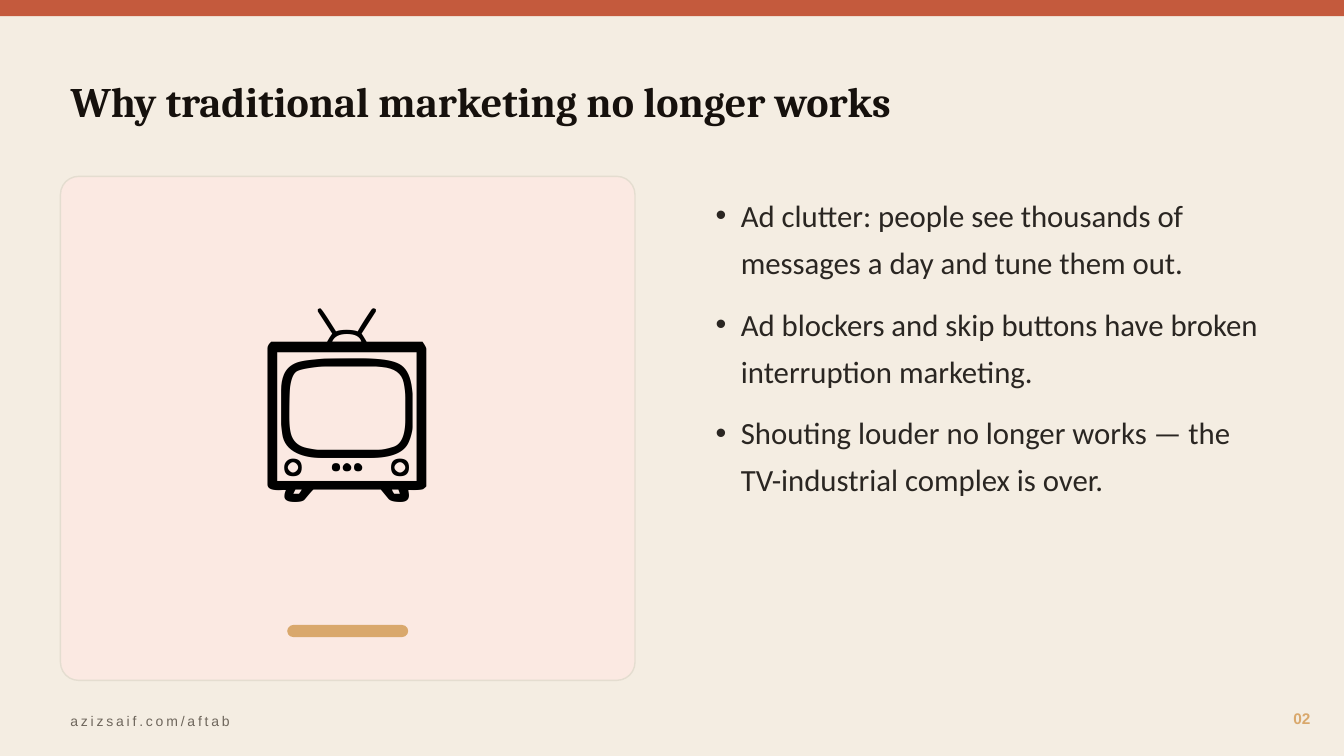
from pptx import Presentation
from pptx.dml.color import RGBColor
from pptx.enum.shapes import MSO_SHAPE as SHAPE
from pptx.enum.text import MSO_ANCHOR as ANCHOR, MSO_AUTO_SIZE as AUTO, PP_ALIGN as ALIGN
from pptx.util import Pt

CREAM = RGBColor(0xF4, 0xED, 0xE2)
RUST = RGBColor(0xC4, 0x5A, 0x3D)
BLUSH = RGBColor(0xFB, 0xE9, 0xE2)
BORDER = RGBColor(0xE4, 0xDD, 0xD0)
GOLD = RGBColor(0xD9, 0xA8, 0x6C)
INK = RGBColor(0x16, 0x11, 0x0D)
BODY = RGBColor(0x2A, 0x26, 0x22)
GREY = RGBColor(0x6E, 0x66, 0x5C)
BLACK = RGBColor(0, 0, 0)


def write(sp, *lines, box, size, color, font="Calibri", bold=False, align=ALIGN.LEFT,
          anchor=ANCHOR.MIDDLE, line=1.0, after=0, indent=0, spacing=0):
    sp.left, sp.top, sp.width, sp.height = map(Pt, box)
    tf = sp.text_frame
    tf.word_wrap = True
    tf.auto_size = AUTO.NONE
    tf.vertical_anchor = anchor
    for i, text in enumerate(lines):
        p = tf.add_paragraph() if i else tf.paragraphs[0]
        p.alignment = align
        p.line_spacing = line
        p.space_before = Pt(0)
        p.space_after = Pt(after)
        if indent:
            pPr = p._p.get_or_add_pPr()
            pPr.set("marL", str(Pt(indent)))
            pPr.set("indent", str(-Pt(indent)))
        r = p.add_run()
        r.text = text
        r.font.name = font
        r.font.size = Pt(size)
        r.font.bold = bold
        r.font.color.rgb = color
        if spacing:
            r._r.get_or_add_rPr().set("spc", str(spacing * 100))


prs = Presentation()
prs.slide_width = Pt(960)
prs.slide_height = Pt(540)
s = prs.slides.add_slide(prs.slide_layouts[1])
s.background.fill.solid()
s.background.fill.fore_color.rgb = CREAM

for kind, box, fill, border, radius in [
    (SHAPE.RECTANGLE, (0, 0, 960, 11.5), RUST, None, None),
    (SHAPE.ROUNDED_RECTANGLE, (43.2, 126, 410.4, 360), BLUSH, BORDER, 0.036),
    (SHAPE.ROUNDED_RECTANGLE, (205.2, 446.4, 86.4, 8.64), GOLD, None, 0.5),
]:
    sp = s.shapes.add_shape(kind, *map(Pt, box))
    sp.shadow.inherit = False
    sp.fill.solid()
    sp.fill.fore_color.rgb = fill
    if border:
        sp.line.color.rgb = border
        sp.line.width = Pt(1)
    else:
        sp.line.fill.background()
    if radius:
        sp.adjustments[0] = radius

write(s.shapes.title, "Why traditional marketing no longer works",
      box=(43.2, 36, 871.2, 72), size=30, color=INK, font="Cambria", bold=True)
write(s.placeholders[1],
      "Ad clutter: people see thousands of messages a day and tune them out.",
      "Ad blockers and skip buttons have broken interruption marketing.",
      "Shouting louder no longer works — the TV-industrial complex is over.",
      box=(504, 129.6, 410.4, 360), size=22, color=BODY, anchor=ANCHOR.TOP,
      line=1.28, after=10, indent=18)

for text, fmt in [
    ("📺", dict(box=(43.2, 126, 410.4, 295.2), size=150, color=BLACK, align=ALIGN.CENTER)),
    ("02", dict(box=(878.4, 500.4, 64.8, 25.2), size=11, color=GOLD, font="Arial",
                bold=True, align=ALIGN.RIGHT)),
    ("azizsaif.com/aftab", dict(box=(43.2, 504, 576, 21.6), size=10, color=GREY,
                                font="Arial", spacing=2)),
]:
    write(s.shapes.add_textbox(0, 0, 0, 0), text, **fmt)

prs.save("out.pptx")
